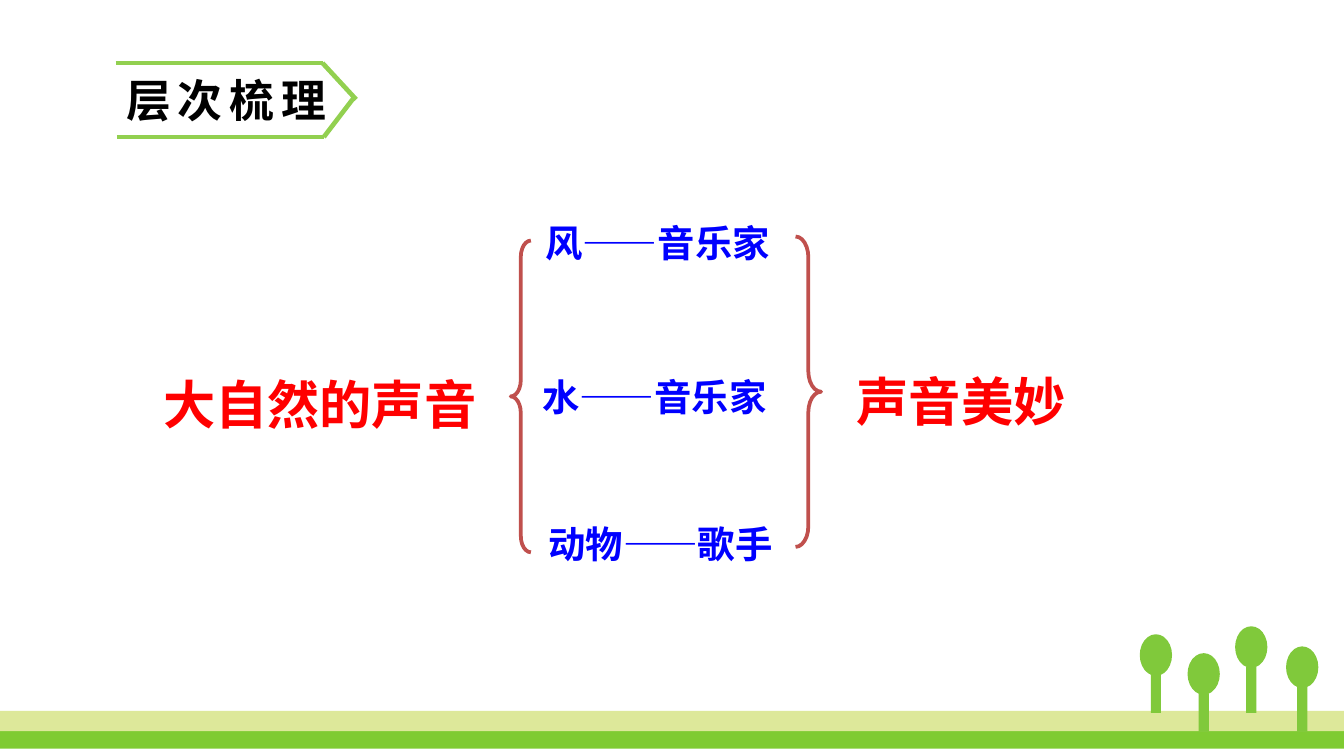
from lxml.etree import SubElement
from pptx import Presentation
from pptx.dml.color import RGBColor
from pptx.enum.shapes import MSO_CONNECTOR, MSO_SHAPE
from pptx.enum.text import MSO_ANCHOR, PP_ALIGN
from pptx.oxml.ns import qn
from pptx.util import Pt

FONT = "Noto Sans CJK SC"
COLORS = {
    "grass": "7FCB32", "field": "DDE89A", "tree": "80C93B", "banner": "92D050",
    "brace": "C0504D", "theme": "FF0000", "item": "0000FF",
    "title": "000000", "white": "FFFFFF",
}

# Content: text, left, top, width, height, size, colour
TITLE = "层次梳理"
LABELS = [
    ("大自然的声音", 75.6, 196.6, 191.5, 39.6, 28, "theme"),
    ("风——音乐家", 277.9, 115.2, 149, 29.5, 20, "item"),
    ("水——音乐家", 274.3, 198, 152.6, 29.5, 20, "item"),
    ("动物——歌手", 280.8, 276.5, 146.2, 29.5, 20, "item"),
    ("声音美妙", 445, 195.1, 139.7, 39.6, 28, "theme"),
]
BRACES = [
    (MSO_SHAPE.LEFT_BRACE, 273.6, 128.9, 10.8, 167),
    (MSO_SHAPE.RIGHT_BRACE, 426.2, 126.7, 13.7, 166.3),
]
BANNER_LINES = [
    (61.9, 33.8, 172.8, 33.8), (62.6, 73.4, 173.5, 73.4),
    (172.8, 33.8, 190.8, 53.3), (173.5, 73.4, 189.4, 52.6),
]
BANDS = [("grass", 391.7, 9.4), ("field", 380.9, 10.8)]
# Crown left, crown top, trunk bottom
TREES = [(610.6, 339.8, 382), (636.2, 349.9, 392), (661.7, 335.5, 382), (689, 346.3, 392)]
CROWN_WIDTH, CROWN_HEIGHT, TRUNK_WIDTH = 17.3, 22.3, 5.5

presentation = Presentation()
presentation.slide_width, presentation.slide_height = Pt(720), Pt(405)
slide = presentation.slides.add_slide(presentation.slide_layouts[6])


def color(name):
    return RGBColor.from_string(COLORS[name])


def add_shape(kind, left, top, width, height, fill=None, line=None, weight=1):
    shape = slide.shapes.add_shape(kind, Pt(left), Pt(top), Pt(width), Pt(height))
    shape.shadow.inherit = False
    if fill:
        shape.fill.solid()
        shape.fill.fore_color.rgb = color(fill)
    else:
        shape.fill.background()
    if line:
        shape.line.color.rgb = color(line)
        shape.line.width = Pt(weight)
    else:
        shape.line.fill.background()
    return shape


def write(shape, text, size, color_name, alignment, side_inset, spacing=None):
    frame = shape.text_frame
    frame.text = text
    frame.word_wrap = True
    frame.margin_left = frame.margin_right = Pt(side_inset)
    frame.margin_top = frame.margin_bottom = Pt(side_inset / 2)
    paragraph = frame.paragraphs[0]
    paragraph.alignment = alignment
    run = paragraph.runs[0]
    run.font.name, run.font.size, run.font.bold = FONT, Pt(size), True
    run.font.color.rgb = color(color_name)
    properties = run.font._element
    SubElement(properties, qn("a:ea")).set("typeface", FONT)
    if spacing:
        properties.set("spc", str(round(spacing * 100)))


# Ground and trees
for name, top, height in BANDS:
    add_shape(MSO_SHAPE.RECTANGLE, 0, top, 720, height, fill=name)
for left, top, bottom in TREES:
    add_shape(MSO_SHAPE.OVAL, left, top, CROWN_WIDTH, CROWN_HEIGHT, fill="tree")
    trunk_left = left + (CROWN_WIDTH - TRUNK_WIDTH) / 2
    trunk_top = top + CROWN_HEIGHT - 0.7
    add_shape(MSO_SHAPE.RECTANGLE, trunk_left, trunk_top, TRUNK_WIDTH, bottom - trunk_top, fill="tree")

# Title banner
title = add_shape(MSO_SHAPE.RECTANGLE, 60.5, 35.3, 132.5, 36, line="white", weight=0.75)
write(title, TITLE, 24, "title", PP_ALIGN.LEFT, 7.2, spacing=3.8)
title.text_frame.vertical_anchor = MSO_ANCHOR.MIDDLE
for ends in BANNER_LINES:
    connector = slide.shapes.add_connector(MSO_CONNECTOR.STRAIGHT, *map(Pt, ends))
    connector.line.color.rgb = color("banner")
    connector.line.width = Pt(2.5)
    SubElement(connector._element.spPr, qn("a:effectLst"))

# Braces and labels
for kind, *box in BRACES:
    brace = add_shape(kind, *box, line="brace", weight=2)
    brace.adjustments[0] = 0.81
for text, left, top, width, height, size, name in LABELS:
    label = slide.shapes.add_textbox(Pt(left), Pt(top), Pt(width), Pt(height))
    write(label, text, size, name, PP_ALIGN.CENTER, 5.4)

presentation.save("out.pptx")
